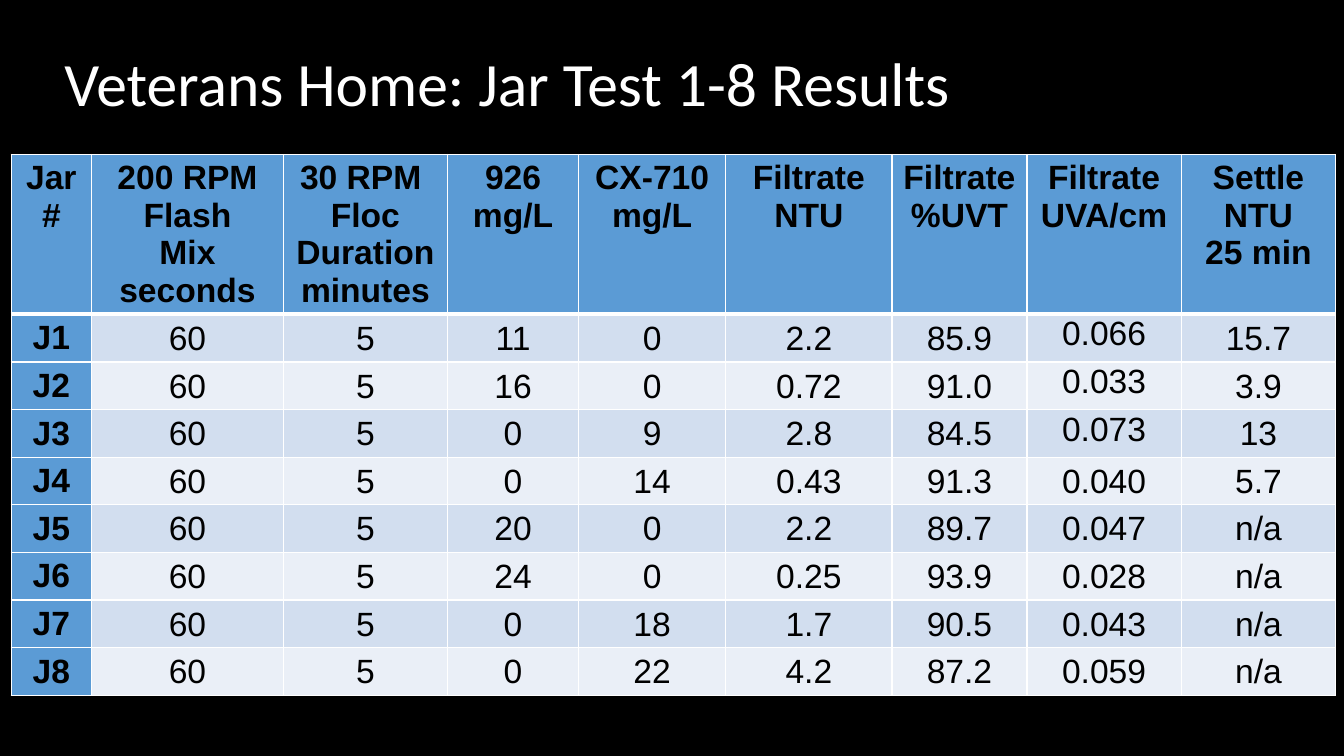
from dataclasses import dataclass

from lxml.etree import SubElement
from pptx import Presentation
from pptx.dml.color import RGBColor as RGB
from pptx.enum.text import MSO_ANCHOR as Anchor, MSO_AUTO_SIZE as AutoSize, PP_ALIGN as Align
from pptx.oxml.ns import qn
from pptx.util import Cm, Pt


@dataclass(frozen=True)
class Theme:
    """Colours, fonts and type sizes of the slide."""
    back: str = "000000"
    title: str = "FFFFFF"
    text: str = "000000"
    head: str = "5B9BD5"
    bands: tuple = ("D2DEEF", "EAEFF7")
    rule: str = "FFFFFF"
    title_font: str = "Calibri"
    table_font: str = "Arial"
    title_size: int = 44
    table_size: int = 24
    thin: int = 1
    thick: int = 3


T = Theme()
WIDTHS = (2.03, 4.83, 4.14, 3.3, 3.71, 4.19, 3.4, 3.89, 3.89)
HEAD_HEIGHT, ROW_HEIGHT = 4.03, 1.2
UVA_COL, TOP_UVA_ROWS = 7, 3
HEADINGS = ("Jar\n#", "200 RPM\nFlash\nMix\nseconds", "30 RPM \nFloc\nDuration\nminutes",
            "926\nmg/L", "CX-710\nmg/L", "Filtrate\nNTU", "Filtrate\n%UVT",
            "Filtrate\nUVA/cm", "Settle\nNTU\n25 min")
JARS = (
    ("11", "0", "2.2", "85.9", "0.066", "15.7"),
    ("16", "0", "0.72", "91.0", "0.033", "3.9"),
    ("0", "9", "2.8", "84.5", "0.073", "13"),
    ("0", "14", "0.43", "91.3", "0.040", "5.7"),
    ("20", "0", "2.2", "89.7", "0.047", "n/a"),
    ("24", "0", "0.25", "93.9", "0.028", "n/a"),
    ("0", "18", "1.7", "90.5", "0.043", "n/a"),
    ("0", "22", "4.2", "87.2", "0.059", "n/a"),
)


def add_run(p, text, font, size, color, bold=False):
    """Add one formatted run to a paragraph."""
    r = p.add_run()
    r.text = text
    r.font.name, r.font.size, r.font.bold = font, Pt(size), bold
    r.font.color.rgb = RGB.from_string(color)


def add_title(s, text):
    """Place and format the title placeholder."""
    sp = s.shapes.title
    sp.left, sp.top, sp.width, sp.height = Cm(1.37), Cm(0.33), Cm(30.18), Cm(3.68)
    tf = sp.text_frame
    tf.auto_size, tf.vertical_anchor = AutoSize.NONE, Anchor.MIDDLE
    p = tf.paragraphs[0]
    p.alignment, p.line_spacing = Align.LEFT, 0.9
    add_run(p, text, T.title_font, T.title_size, T.title)


def set_borders(cell, top, bottom):
    """Rule all four sides of a cell, with the top and bottom widths given."""
    tc_pr = cell._tc.get_or_add_tcPr()
    for side, width in (("L", T.thin), ("R", T.thin), ("T", top), ("B", bottom)):
        ln = SubElement(tc_pr, qn(f"a:ln{side}"), w=str(Pt(width)))
        fill = SubElement(ln, qn("a:solidFill"))
        SubElement(fill, qn("a:srgbClr"), val=T.rule)


def fill_cell(cell, text, color, bold):
    """Colour a cell and write its centred lines."""
    cell.fill.solid()
    cell.fill.fore_color.rgb = RGB.from_string(color)
    tf = cell.text_frame
    for i, line in enumerate(text.split("\n")):
        p = tf.add_paragraph() if i else tf.paragraphs[0]
        p.alignment = Align.CENTER
        add_run(p, line, T.table_font, T.table_size, T.text, bold)


def set_value_layout(cell, anchor):
    """Give a value cell its tight margins and anchor."""
    cell.margin_left = cell.margin_right = cell.margin_top = Cm(0.03)
    cell.margin_bottom = 0
    cell.vertical_anchor = anchor


def add_results(s):
    """Build the table of jar test results."""
    rows = [HEADINGS] + [(f"J{n}", "60", "5", *jar) for n, jar in enumerate(JARS, 1)]
    height = HEAD_HEIGHT + ROW_HEIGHT * len(JARS)
    table = s.shapes.add_table(len(rows), len(WIDTHS), Cm(0.28), Cm(3.89),
                               Cm(sum(WIDTHS)), Cm(height)).table
    table.first_col = True
    for col, width in zip(table.columns, WIDTHS):
        col.width = Cm(width)
    for i, row in enumerate(rows):
        table.rows[i].height = Cm(ROW_HEIGHT if i else HEAD_HEIGHT)
        for j, text in enumerate(row):
            cell = table.cell(i, j)
            is_head = i == 0 or j == 0
            set_borders(cell, T.thick if i == 1 else T.thin, T.thin if i else T.thick)
            fill_cell(cell, text, T.head if is_head else T.bands[(i - 1) % 2], is_head)
            if not is_head:
                at_top = j == UVA_COL and i <= TOP_UVA_ROWS
                set_value_layout(cell, Anchor.TOP if at_top else Anchor.MIDDLE)


def main():
    """Create the slide and save it."""
    prs = Presentation()
    prs.slide_width, prs.slide_height = Cm(33.87), Cm(19.05)
    s = prs.slides.add_slide(prs.slide_layouts[5])
    s.background.fill.solid()
    s.background.fill.fore_color.rgb = RGB.from_string(T.back)
    add_title(s, "Veterans Home: Jar Test 1-8 Results")
    add_results(s)
    prs.save("out.pptx")


if __name__ == "__main__":
    main()
